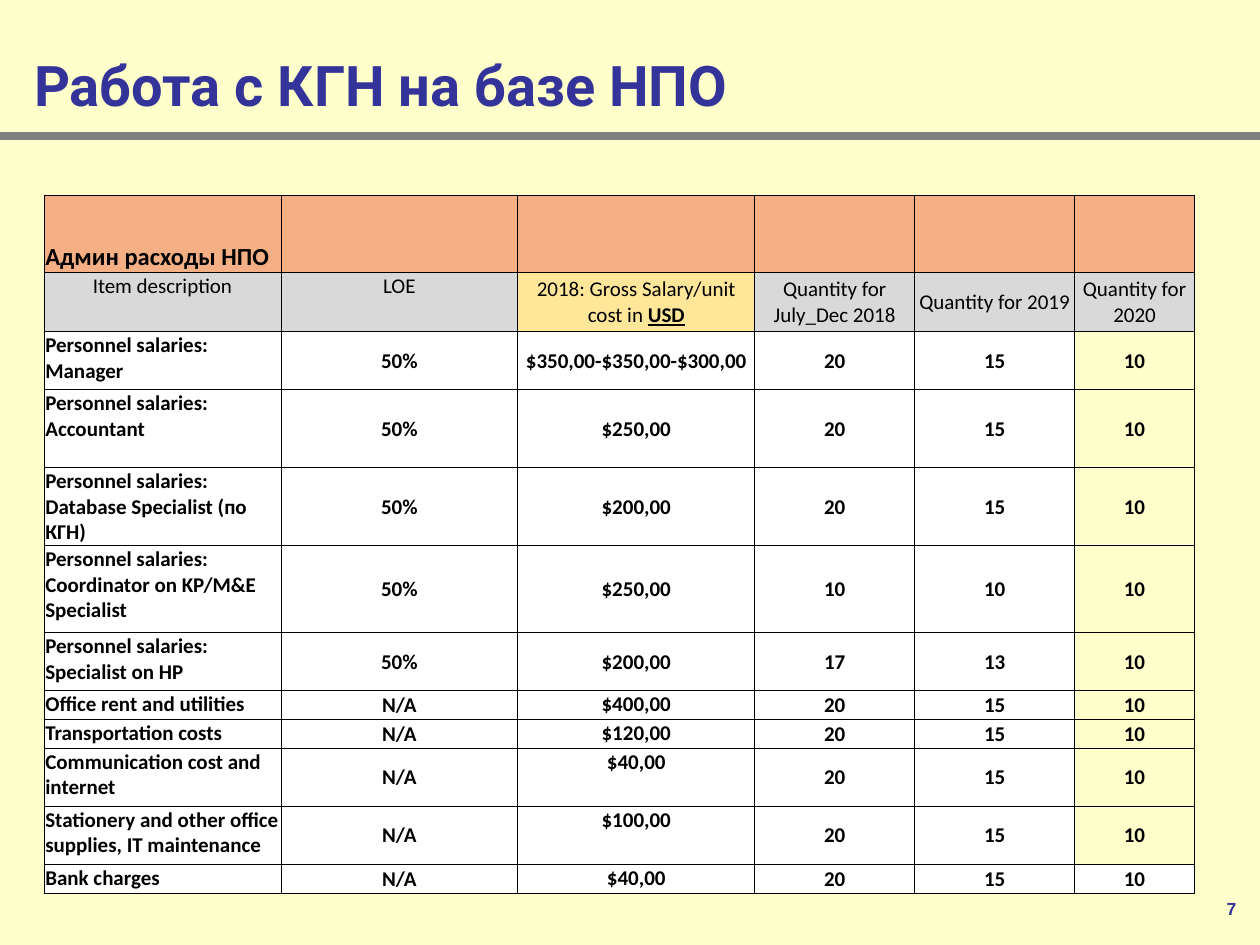
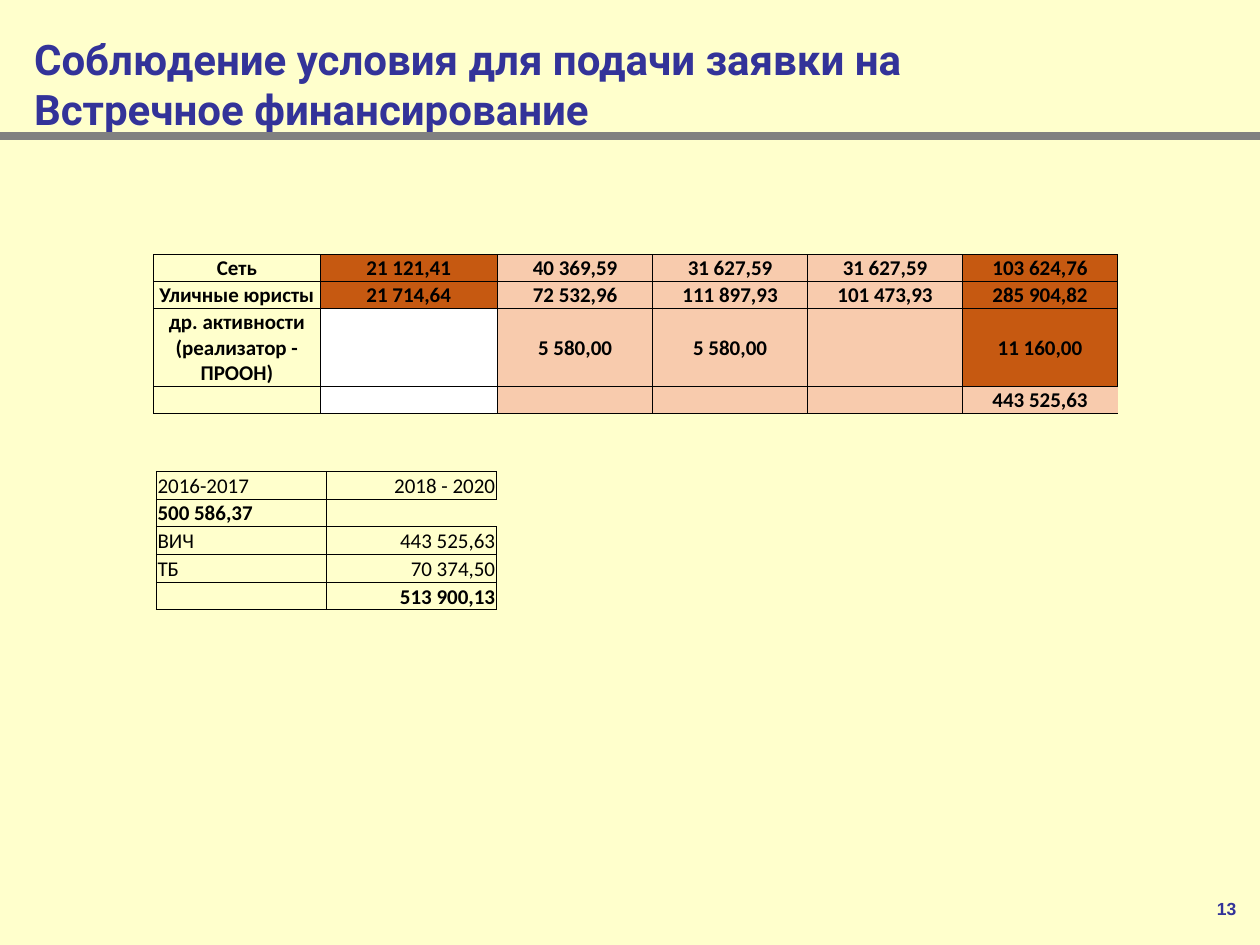
import pptx
import pptx.util
import pptx.dml.color
import pptx.enum.shapes
import pptx.enum.text
import pptx.oxml.ns
from lxml import etree

Inches = pptx.util.Inches
Pt = pptx.util.Pt
ALIGN = pptx.enum.text.PP_ALIGN
ANCHOR = pptx.enum.text.MSO_ANCHOR

THEME = {
    "background": "FFFFCC", "title": "333399", "rule": "808080", "ink": "000000",
    "white": "FFFFFF", "section": "F4B084", "header": "D9D9D9", "price": "FFE699",
    "dark": "C65911", "light": "F8CBAD",
    "title_font": "Roboto", "table_font": "Calibri", "number_font": "Arial",
    "section_size": 14, "table_size": 12, "number_size": 10,
    "rule_width": 4.5, "border_width": 0.5,
}
NO_TABLE_STYLE = "{2D5ABB26-0587-4C30-8999-92F81FD0307C}"

ADMIN_COSTS = [
    ("Админ расходы НПО", "", "", "", "", ""),
    ("Item description", "LOE", ("2018: Gross Salary/unit cost in ", "USD"),
     "Quantity for July_Dec 2018", "Quantity for 2019", "Quantity for 2020"),
    ("Personnel salaries: Manager", "50%", "$350,00-$350,00-$300,00", "20", "15", "10"),
    ("Personnel salaries: Accountant", "50%", "$250,00", "20", "15", "10"),
    ("Personnel salaries: Database Specialist (по КГН)", "50%", "$200,00", "20", "15", "10"),
    ("Personnel salaries: Coordinator on KP/M&E Specialist", "50%", "$250,00", "10", "10", "10"),
    ("Personnel salaries: Specialist on HP", "50%", "$200,00", "17", "13", "10"),
    ("Office rent and utilities", "N/A", "$400,00", "20", "15", "10"),
    ("Transportation costs", "N/A", "$120,00", "20", "15", "10"),
    ("Communication cost and internet", "N/A", "$40,00", "20", "15", "10"),
    ("Stationery and other office supplies, IT maintenance", "N/A", "$100,00", "20", "15", "10"),
    ("Bank charges", "N/A", "$40,00", "20", "15", "10"),
]
ACTIVITIES = [
    ("Сеть", "21 121,41", "40 369,59", "31 627,59", "31 627,59", "103 624,76"),
    ("Уличные юристы", "21 714,64", "72 532,96", "111 897,93", "101 473,93", "285 904,82"),
    ("др. активности (реализатор - ПРООН)", "", "5 580,00", "5 580,00", "", "11 160,00"),
    ("", "", "", "", "", "443 525,63"),
]
PERIODS = [
    ("2016-2017", "2018 - 2020"),
    ("500 586,37", ""),
    ("ВИЧ", "443 525,63"),
    ("ТБ", "70 374,50"),
    ("", "513 900,13"),
]


def admin_style(row, column):
    if row == 0:
        return {"fill": "section", "bold": True, "size": "section_size", "anchor": ANCHOR.BOTTOM}
    if row == 1:
        return {"fill": "price" if column == 2 else "header", "align": ALIGN.CENTER,
                "anchor": ANCHOR.TOP if column < 2 else ANCHOR.MIDDLE}
    last_row = row == len(ADMIN_COSTS) - 1
    top = column == 0 or (column == 2 and row >= 7)
    return {"fill": None if column == 5 and not last_row else "white", "bold": True,
            "align": ALIGN.LEFT if column == 0 else ALIGN.CENTER,
            "anchor": ANCHOR.TOP if top else ANCHOR.MIDDLE}


def activity_style(row, column):
    fill = "light"
    if column == 0:
        fill = None
    elif column == 1:
        fill = "dark" if row < 2 else "white"
    elif column == 5 and row < 3:
        fill = "dark"
    return {"fill": fill, "bold": True, "align": ALIGN.CENTER, "anchor": ANCHOR.MIDDLE,
            "open_right": (row, column) == (3, 5)}


def period_style(row, column):
    return {"bold": row in (1, 4), "align": ALIGN.RIGHT if column else ALIGN.LEFT,
            "anchor": ANCHOR.BOTTOM, "open_right": (row, column) == (1, 1)}


SLIDES = [
    {"title": "Работа с КГН на базе НПО", "title_size": 32, "number": "7", "tables": [
        {"at": (0.35, 1.55), "content": ADMIN_COSTS, "style": admin_style,
         "columns": [1.88] * 3 + [1.27] * 2 + [0.95],
         "rows": [0.61, 0.47, 0.46, 0.62, 0.62, 0.69, 0.46, 0.23, 0.23, 0.46, 0.46, 0.23]}]},
    {"title": "Соблюдение условия для подачи заявки на Встречное финансирование",
     "title_size": 24, "number": "13", "tables": [
         {"at": (1.22, 2.02), "content": ACTIVITIES, "style": activity_style,
          "columns": [1.32, 1.41] + [1.23] * 4, "rows": [0.21, 0.21, 0.62, 0.21]},
         {"at": (1.24, 3.74), "content": PERIODS, "style": period_style,
          "columns": [1.35] * 2, "rows": [0.22] * 5}]},
]


def color(name):
    return pptx.dml.color.RGBColor.from_string(THEME[name])


def apply(target, values):
    for name, value in values.items():
        setattr(target, name, value)


def add_run(paragraph, text, font, size, ink, bold, underline=False):
    run = paragraph.add_run()
    run.text = text
    apply(run.font, {"name": THEME[font], "size": Pt(size), "bold": bold, "underline": underline})
    run.font.color.rgb = color(ink)


def add_borders(cell, sides):
    properties = cell._tc.get_or_add_tcPr()
    for index, side in enumerate(sides):
        line = etree.Element(pptx.oxml.ns.qn(f"a:ln{side}"), w=str(Pt(THEME["border_width"])))
        fill = etree.SubElement(line, pptx.oxml.ns.qn("a:solidFill"))
        etree.SubElement(fill, pptx.oxml.ns.qn("a:srgbClr"), val=THEME["ink"])
        properties.insert(index, line)


def fill_cell(cell, text, style):
    apply(cell, {"margin_left": Inches(0.01), "margin_right": Inches(0.01),
                 "margin_top": Inches(0.01), "margin_bottom": 0,
                 "vertical_anchor": style["anchor"]})
    if style.get("fill"):
        cell.fill.solid()
        cell.fill.fore_color.rgb = color(style["fill"])
    else:
        cell.fill.background()
    add_borders(cell, "LTB" if style.get("open_right") else "LRTB")
    paragraph = cell.text_frame.paragraphs[0]
    paragraph.alignment = style.get("align", ALIGN.LEFT)
    size = THEME[style.get("size", "table_size")]
    if not text:
        etree.SubElement(paragraph._p, pptx.oxml.ns.qn("a:endParaRPr"), sz=str(size * 100))
        return
    plain, *emphasis = (text,) if isinstance(text, str) else text
    add_run(paragraph, plain, "table_font", size, "ink", style.get("bold", False))
    for word in emphasis:
        add_run(paragraph, word, "table_font", size, "ink", True, True)


def add_table(slide, at, content, style, columns, rows):
    left, top = at
    shape = slide.shapes.add_table(len(rows), len(columns), Inches(left), Inches(top),
                                   Inches(sum(columns)), Inches(sum(rows)))
    table = shape.table
    apply(table, {"first_row": False, "horz_banding": False})
    table._tbl.tblPr.find(pptx.oxml.ns.qn("a:tableStyleId")).text = NO_TABLE_STYLE
    for column, width in zip(table.columns, columns):
        column.width = Inches(width)
    for row, height in zip(table.rows, rows):
        row.height = Inches(height)
    for row, texts in enumerate(content):
        for column, text in enumerate(texts):
            fill_cell(table.cell(row, column), text, style(row, column))


def add_rule(slide):
    rule = slide.shapes.add_connector(pptx.enum.shapes.MSO_CONNECTOR.STRAIGHT,
                                      0, Inches(1.08), Inches(10), Inches(1.08))
    rule.line.color.rgb = color("rule")
    rule.line.width = Pt(THEME["rule_width"])
    etree.SubElement(rule._element.spPr, pptx.oxml.ns.qn("a:effectLst"))


def add_title(slide, text, size):
    title = slide.shapes.title
    apply(title, {"left": Inches(0.17), "top": Inches(0.33),
                  "width": Inches(8.5), "height": Inches(0.67)})
    apply(title.text_frame, {"word_wrap": True, "vertical_anchor": ANCHOR.MIDDLE,
                             "auto_size": pptx.enum.text.MSO_AUTO_SIZE.NONE})
    paragraph = title.text_frame.paragraphs[0]
    paragraph.alignment = ALIGN.LEFT
    add_run(paragraph, text, "title_font", size, "title", True)


def add_number(slide, text):
    box = slide.shapes.add_textbox(Inches(7.58), Inches(7.08), Inches(2.33), Inches(0.27))
    box.text_frame.word_wrap = True
    paragraph = box.text_frame.paragraphs[0]
    paragraph.alignment = ALIGN.RIGHT
    add_run(paragraph, text, "number_font", THEME["number_size"], "title", True)


def main():
    presentation = pptx.Presentation()
    apply(presentation, {"slide_width": Inches(10), "slide_height": Inches(7.5)})
    background = presentation.slide_master.background.fill
    background.solid()
    background.fore_color.rgb = color("background")
    for page in SLIDES:
        slide = presentation.slides.add_slide(presentation.slide_layouts.get_by_name("Title Only"))
        add_rule(slide)
        add_title(slide, page["title"], page["title_size"])
        for table in page["tables"]:
            add_table(slide, **table)
        add_number(slide, page["number"])
    presentation.save("out.pptx")


if __name__ == "__main__":
    main()
